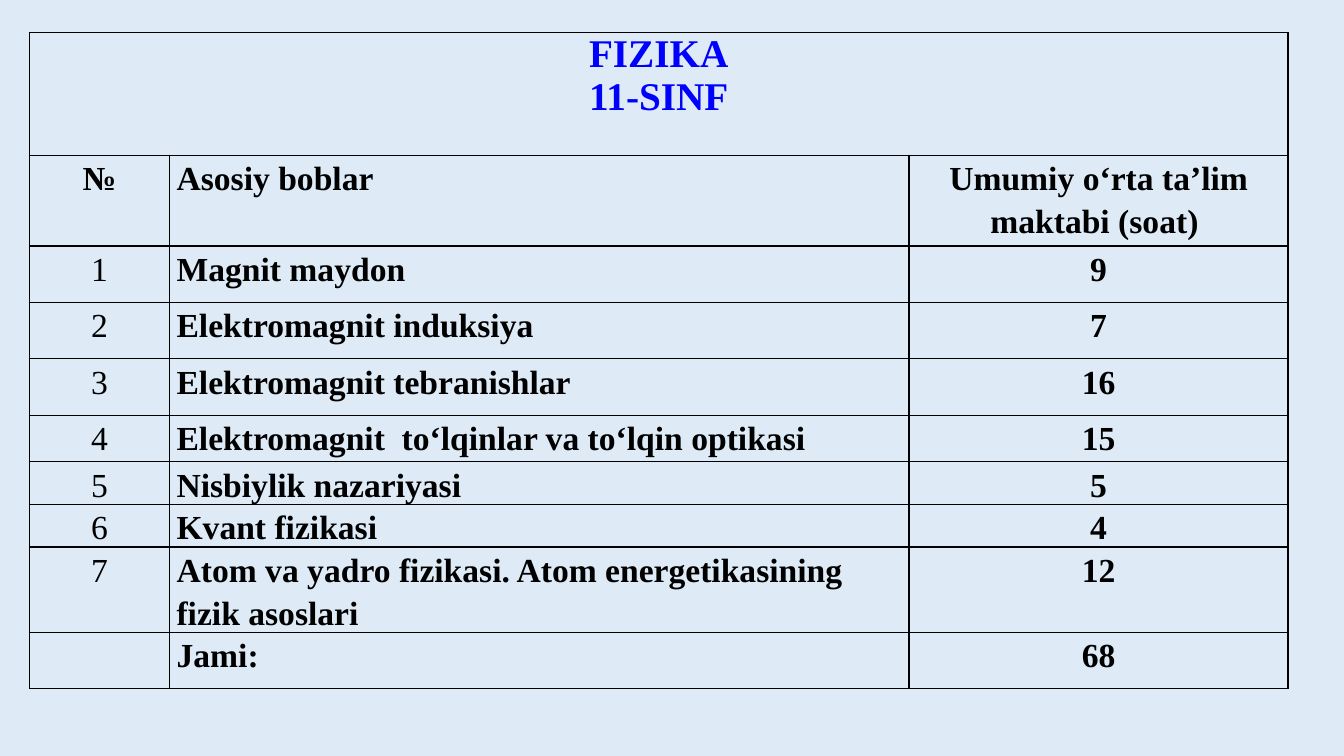
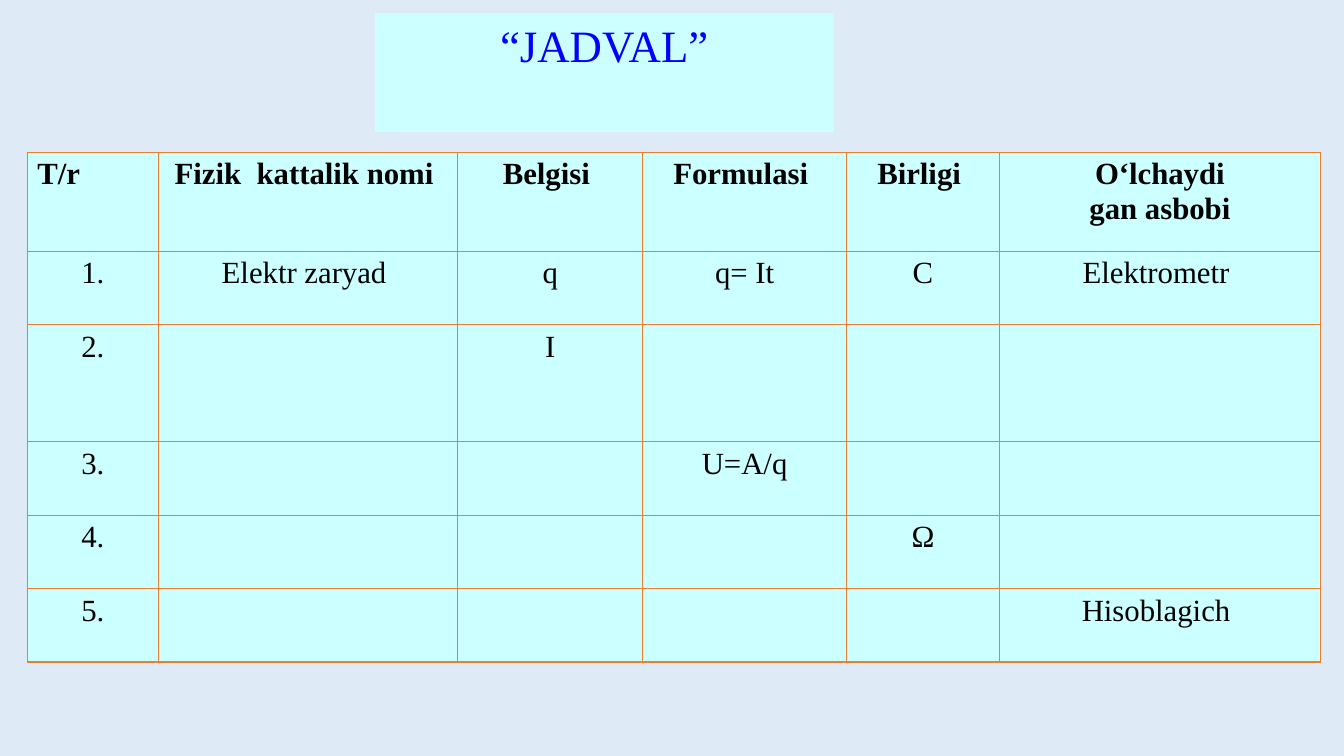
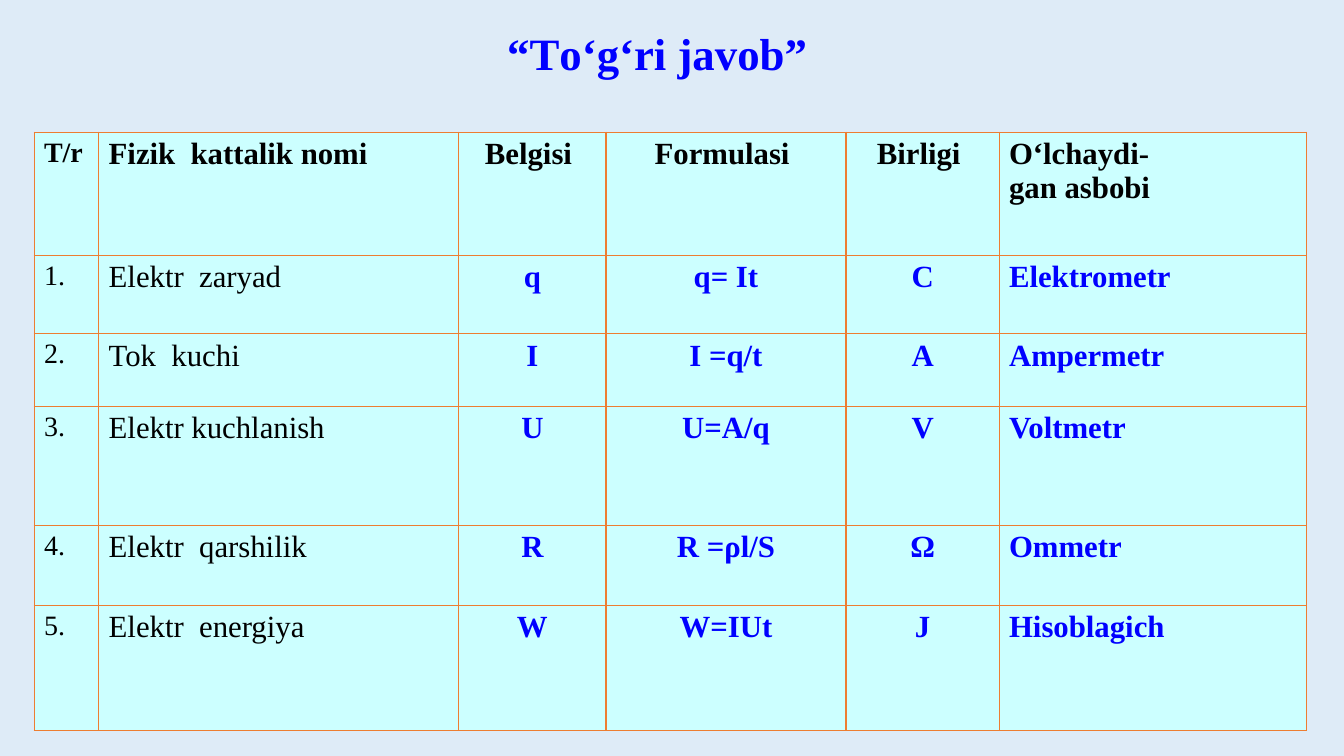
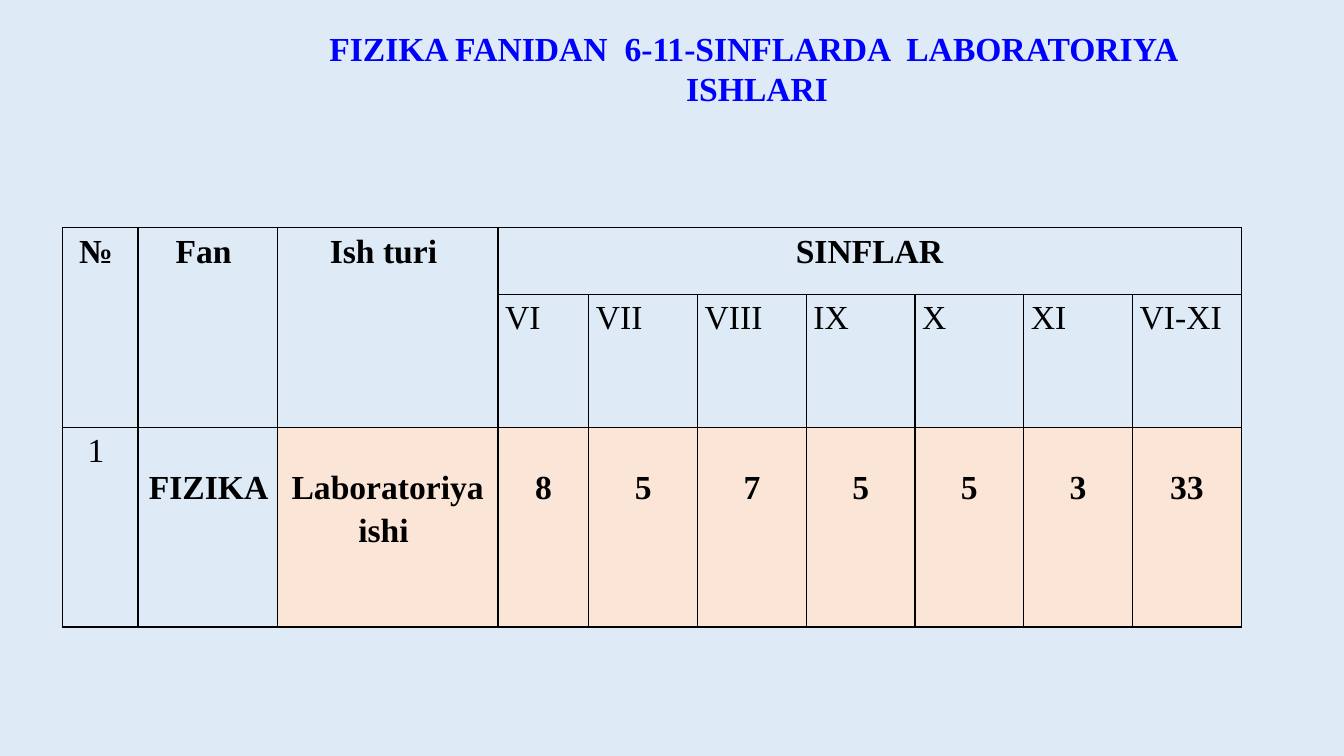
from dataclasses import dataclass

from lxml import etree
from pptx import Presentation
from pptx.dml.color import RGBColor
from pptx.enum.text import MSO_ANCHOR, MSO_AUTO_SIZE, PP_ALIGN
from pptx.oxml.ns import qn
from pptx.util import Cm, Pt

LEFT, CENTER = PP_ALIGN.LEFT, PP_ALIGN.CENTER
TOP = MSO_ANCHOR.TOP
NO_AUTOFIT = MSO_AUTO_SIZE.NONE
TITLE_ONLY, BLANK = 5, 6


@dataclass(frozen=True)
class Theme:
    font: str = "Times New Roman"
    page: str = "DEEBF7"
    aqua: str = "CCFFFF"
    peach: str = "FBE5D6"
    blue: str = "0000FF"
    black: str = "000000"
    orange: str = "ED7D31"
    title: int = 32
    banner: int = 28
    large: int = 24
    medium: int = 22
    small: int = 20
    border: int = 1


THEME = Theme()


@dataclass(frozen=True)
class Look:
    size: int
    bold: bool = False
    color: str = THEME.black
    align: int = CENTER
    fill: str = THEME.page
    spacing: float = 1.0
    top: float = 0


CHAPTERS = [
    ("FIZIKA\n11-SINF", "", ""),
    ("№", "Asosiy boblar", "Umumiy o‘rta ta’lim maktabi (soat) "),
    ("1", "Magnit maydon", "9"),
    ("2", "Elektromagnit induksiya", "7"),
    ("3", "Elektromagnit tebranishlar", "16"),
    ("4", "Elektromagnit  to‘lqinlar va to‘lqin optikasi", "15"),
    ("5", "Nisbiylik nazariyasi", "5"),
    ("6", "Kvant fizikasi", "4"),
    ("7", "Atom va yadro fizikasi. Atom energetikasining fizik asoslari", "12"),
    ("", "Jami:", "68"),
]
EXERCISE = [
    ("T/r", "Fizik  kattalik nomi ", "Belgisi ", "Formulasi ", "Birligi ", "O‘lchaydi\ngan asbobi"),
    ("1.", "Elektr zaryad ", "q", "q= It", "C", "Elektrometr "),
    ("2.", "", "I", "", "", ""),
    ("3.", "", "", "U=A/q", "", ""),
    ("4.", "", "", "", "Ω", ""),
    ("5.", "", "", "", "", "Hisoblagich "),
]
ANSWERS = [
    ("T/r", "Fizik  kattalik nomi", "Belgisi ", "Formulasi ", "Birligi ", "O‘lchaydi-\ngan asbobi"),
    ("1.", "Elektr  zaryad", "q", "q= It", "C", "Elektrometr"),
    ("2.", "Tok  kuchi", "I", "I =q/t", "A", "Ampermetr"),
    ("3.", "Elektr kuchlanish", "U", "U=A/q", "V", "Voltmetr"),
    ("4.", "Elektr  qarshilik", "R", "R =ρl/S", "Ω", "Ommetr"),
    ("5.", "Elektr  energiya", "W", "W=IUt", "J", "Hisoblagich"),
]
LAB_WORK = [
    ("№ ", "Fan ", "Ish turi ", "SINFLAR", "", "", "", "", "", ""),
    ("", "", "", "VI", "VII", "VIII", "IX", "X", "XI", "VI-XI"),
    ("1 ", "FIZIKA ", "Laboratoriya ishi ", "8", "5", "7", "5", "5", "3", "33"),
]


def chapter_look(row, column):
    if row == 0:
        return Look(THEME.banner, True, THEME.blue)
    bold = row == 1 or column > 0
    return Look(THEME.large, bold, align=LEFT if column == 1 else CENTER, spacing=1.15)


def exercise_look(row, column):
    align = LEFT if row == column == 0 else CENTER
    return Look(THEME.medium, row == 0, align=align, fill=THEME.aqua)


def answer_look(row, column):
    answer = row > 0 and column > 1
    return Look(
        THEME.small if column == 0 else THEME.medium,
        row == 0 or answer,
        THEME.blue if answer else THEME.black,
        CENTER if column in (2, 3, 4) else LEFT,
        THEME.aqua,
    )


def lab_look(row, column):
    result = row == 2 and column > 0
    return Look(
        THEME.large,
        row == 0 or result,
        align=LEFT if row == 1 else CENTER,
        fill=THEME.peach if row == 2 and column > 1 else THEME.page,
        spacing=1.15,
        top=0.93 if result else 0,
    )


TIGHT, ROOMY = (0.18, 0), (0.25, 0.13)

PAGES = [
    {
        "rows": CHAPTERS, "look": chapter_look, "inset": TIGHT, "border": THEME.black,
        "at": (0.74, 0.81),
        "widths": [3.53, 18.64, 9.55],
        "heights": [3.1, 2.29, 1.42, 1.42, 1.42, 1.17, 0.94, 0.84, 1.68, 1.42],
        "merges": [(0, 0, 0, 2)],
    },
    {
        "title": "“JADVAL”", "title_at": (9.45, 0.33, 11.56, 3), "title_fill": THEME.aqua,
        "title_look": Look(THEME.title, False, THEME.blue),
        "rows": EXERCISE, "look": exercise_look, "inset": ROOMY, "border": THEME.orange,
        "at": (0.69, 3.84),
        "widths": [3.3, 7.54, 4.67, 5.13, 3.86, 8.08],
        "heights": [2.49, 1.85, 2.95, 1.85, 1.85, 1.85],
    },
    {
        "title": "“Тo‘g‘ri javob”", "title_at": (0.69, 0.53, 31.75, 1.63),
        "title_look": Look(THEME.title, True, THEME.blue),
        "rows": ANSWERS, "look": answer_look, "inset": ROOMY, "border": THEME.orange,
        "at": (0.86, 3.33),
        "widths": [1.63, 9.07, 3.71, 6.05, 3.86, 7.75],
        "heights": [3.1, 1.98, 1.83, 3, 2.01, 3.15],
    },
    {
        "title": "FIZIKA FANIDAN  6-11-SINFLARDA  LABORATORIYA \nISHLARI",
        "title_at": (5.72, 0.58, 26.72, 2.31),
        "title_look": Look(THEME.large, True, THEME.blue),
        "rows": LAB_WORK, "look": lab_look, "inset": TIGHT, "border": THEME.black,
        "at": (1.57, 5.74),
        "widths": [1.91, 3.51, 5.56, 2.29] + [2.74] * 6,
        "heights": [1.68, 3.35, 5.03],
        "merges": [(0, column, 1, column) for column in range(3)] + [(0, 3, 0, 9)],
    },
]


def write_text(frame, text, look):
    frame.word_wrap = True
    for index, line in enumerate(text.split("\n")):
        para = frame.add_paragraph() if index else frame.paragraphs[0]
        para.alignment = look.align
        para.line_spacing = look.spacing
        span = para.add_run()
        span.text = line
        span.font.name = THEME.font
        span.font.size = Pt(look.size)
        span.font.bold = look.bold
        span.font.color.rgb = RGBColor.from_string(look.color)


def paint(fill, color):
    fill.solid()
    fill.fore_color.rgb = RGBColor.from_string(color)


def add_borders(cell, color):
    properties = cell._tc.get_or_add_tcPr()
    for side in ("a:lnL", "a:lnR", "a:lnT", "a:lnB"):
        line = etree.SubElement(properties, qn(side), w=str(Pt(THEME.border)))
        solid = etree.SubElement(line, qn("a:solidFill"))
        etree.SubElement(solid, qn("a:srgbClr"), val=color)


def add_title(page, content):
    box = page.shapes.title
    box.left, box.top, box.width, box.height = map(Cm, content["title_at"])
    frame = box.text_frame
    frame.auto_size = NO_AUTOFIT
    frame.vertical_anchor = TOP
    write_text(frame, content["title"], content["title_look"])
    if "title_fill" in content:
        paint(box.fill, content["title_fill"])


def add_grid(page, content):
    rows, widths, heights = content["rows"], content["widths"], content["heights"]
    left, top = content["at"]
    table = page.shapes.add_table(
        len(rows), len(widths), Cm(left), Cm(top), Cm(sum(widths)), Cm(sum(heights))
    ).table
    table.first_row = table.horz_banding = False
    for column, width in zip(table.columns, widths):
        column.width = Cm(width)
    for row, height in zip(table.rows, heights):
        row.height = Cm(height)
    side, edge = content["inset"]
    for row, texts in enumerate(rows):
        for column, text in enumerate(texts):
            cell, look = table.cell(row, column), content["look"](row, column)
            cell.margin_left = cell.margin_right = Cm(side)
            cell.margin_top, cell.margin_bottom = Cm(edge + look.top), Cm(edge)
            add_borders(cell, content["border"])
            paint(cell.fill, look.fill)
            if text:
                write_text(cell.text_frame, text, look)
    for first_row, first_column, last_row, last_column in content.get("merges", []):
        table.cell(first_row, first_column).merge(table.cell(last_row, last_column))


def main():
    deck = Presentation()
    deck.slide_width, deck.slide_height = Cm(33.87), Cm(19.05)
    paint(deck.slide_master.background.fill, THEME.page)
    for content in PAGES:
        titled = "title" in content
        page = deck.slides.add_slide(deck.slide_layouts[TITLE_ONLY if titled else BLANK])
        if titled:
            add_title(page, content)
        add_grid(page, content)
    deck.save("out.pptx")


if __name__ == "__main__":
    main()
